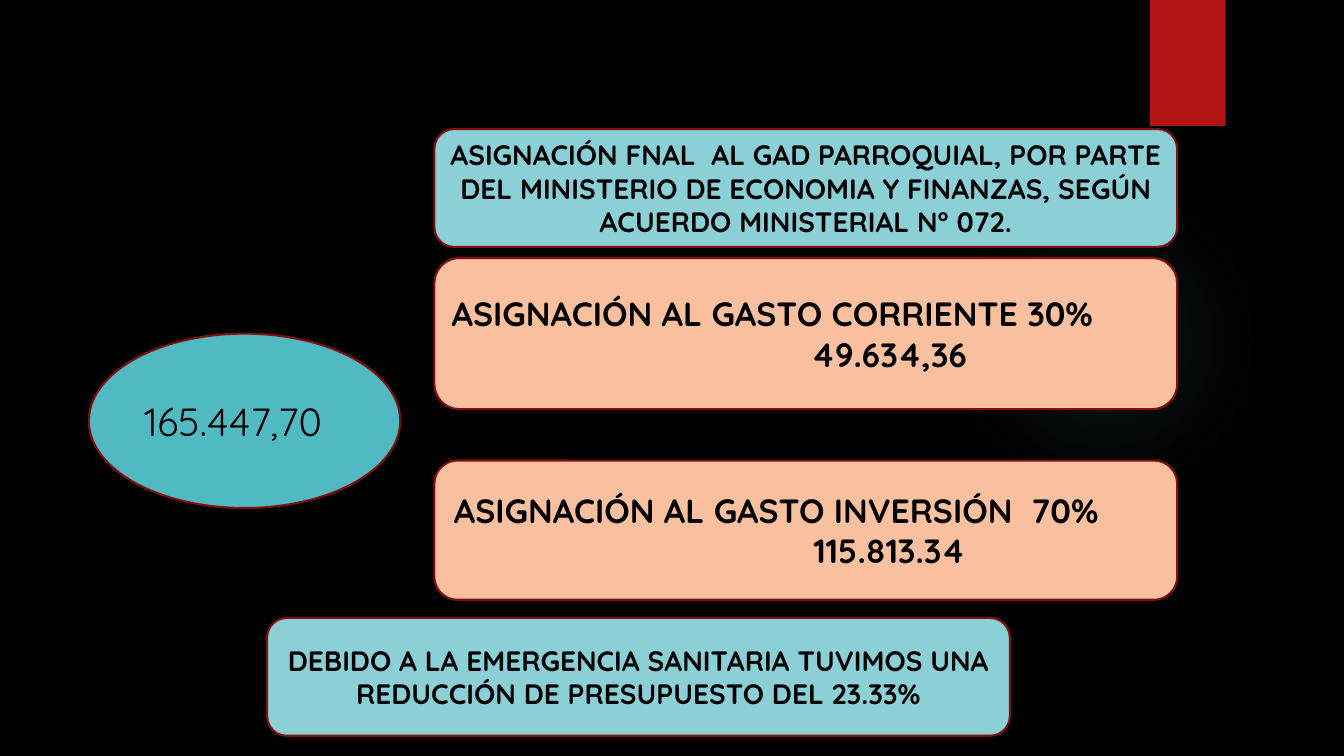
"""Build the slide on the parish budget allocation."""
from dataclasses import dataclass

import lxml.etree
import pptx
import pptx.dml.color
import pptx.enum.shapes
import pptx.enum.text
import pptx.oxml.ns
import pptx.util

Pt = pptx.util.Pt
Kind = pptx.enum.shapes.MSO_SHAPE
Align = pptx.enum.text.PP_ALIGN

FONT = "Quicksand"
BLACK, RED, DARK_RED = "000000", "B01513", "82100E"
AQUA, TEAL, PEACH = "8AD0D6", "50B9C1", "F8C09F"
PANEL_LEFT, PANEL_WIDTH = 310.3, 530.6
AMOUNT_INDENT = 257


@dataclass(frozen=True)
class Line:
    text: str
    indent: float = 0


@dataclass(frozen=True)
class Panel:
    top: float
    height: float
    color: str
    lines: tuple[Line, ...] = ()
    size: float = 20
    align: Align = Align.CENTER
    left: float = PANEL_LEFT
    width: float = PANEL_WIDTH
    kind: Kind = Kind.ROUNDED_RECTANGLE
    bold: bool = True
    outline: str | None = DARK_RED


HEADING = Panel(92.2, 84.2, AQUA, (Line(
    "ASIGNACIÓN FNAL  AL GAD PARROQUIAL, POR PARTE DEL MINISTERIO DE ECONOMIA "
    "Y FINANZAS, SEGÚN ACUERDO MINISTERIAL N° 072."),))
HEADING_PANEL = Panel(HEADING.top, HEADING.height, HEADING.color)
GLOW = Panel(131.8, 221.8, TEAL, left=677.5, width=221.8, kind=Kind.OVAL, outline=None)
TAB = Panel(0, 90, RED, left=821.5, width=54, kind=Kind.RECTANGLE, outline=None)
PANELS = (
    TAB,
    HEADING_PANEL,
    Panel(184.3, 108, PEACH,
          (Line("ASIGNACIÓN AL GASTO CORRIENTE 30%"), Line("49.634,36", AMOUNT_INDENT)),
          24, Align.LEFT),
    Panel(329, 99.4, PEACH,
          (Line("ASIGNACIÓN AL GASTO INVERSIÓN  70%", 2),
           Line("115.813.34", AMOUNT_INDENT + 2)),
          24, Align.LEFT),
    Panel(238.3, 124.6, TEAL, (Line("165.447,70"),), 28, Align.LEFT,
          left=63.4, width=222.5, kind=Kind.OVAL, bold=False),
    Panel(441.4, 84.2, AQUA, (Line(
        "DEBIDO A LA EMERGENCIA SANITARIA TUVIMOS UNA REDUCCIÓN DE PRESUPUESTO "
        "DEL 23.33%"),), left=190.8),
)


def paint(fill: pptx.dml.fill.FillFormat, color: str) -> None:
    """Give a fill one solid colour."""
    fill.solid()
    fill.fore_color.rgb = pptx.dml.color.RGBColor.from_string(color)


def write(frame: pptx.text.text.TextFrame, panel: Panel) -> None:
    """Write the lines of a panel, one paragraph each."""
    frame.word_wrap = True
    frame.auto_size = pptx.enum.text.MSO_AUTO_SIZE.NONE
    frame.vertical_anchor = pptx.enum.text.MSO_ANCHOR.MIDDLE
    for number, line in enumerate(panel.lines):
        paragraph = frame.add_paragraph() if number else frame.paragraphs[0]
        paragraph.text = line.text
        paragraph.alignment = panel.align
        if line.indent:
            paragraph._p.get_or_add_pPr().set("marL", str(Pt(line.indent)))
        paragraph.font.name = FONT
        paragraph.font.size = Pt(panel.size)
        paragraph.font.bold = panel.bold
        paint(paragraph.font.fill, BLACK)


def draw(slide: pptx.slide.Slide, panel: Panel) -> pptx.shapes.autoshape.Shape:
    """Draw a panel with its text."""
    shape = slide.shapes.add_shape(
        panel.kind, Pt(panel.left), Pt(panel.top), Pt(panel.width), Pt(panel.height))
    shape.shadow.inherit = False
    paint(shape.fill, panel.color)
    if panel.outline:
        paint(shape.line.fill, panel.outline)
        shape.line.width = Pt(1.5)
    else:
        shape.line.fill.background()
    write(shape.text_frame, panel)
    return shape


def draw_glow(slide: pptx.slide.Slide) -> None:
    """Draw the faint round glow that fades outwards."""
    properties = draw(slide, GLOW)._element.spPr
    solid = properties.find(pptx.oxml.ns.qn("a:solidFill"))
    stops = "".join(
        f'<a:gs pos="{place * 1000}"><a:srgbClr val="{GLOW.color}">'
        f'<a:alpha val="{alpha * 1000}"/></a:srgbClr></a:gs>'
        for place, alpha in ((0, 7), (36, 6), (69, 0)))
    gradient = lxml.etree.fromstring(
        f'<a:gradFill {pptx.oxml.ns.nsdecls("a")}><a:gsLst>{stops}</a:gsLst>'
        '<a:path path="circle"><a:fillToRect l="50000" t="50000" r="50000" b="50000"/>'
        '</a:path></a:gradFill>')
    properties.replace(solid, gradient)


def place_heading(slide: pptx.slide.Slide) -> None:
    """Set the title over the heading panel."""
    heading = slide.shapes.title
    heading.left, heading.top = Pt(HEADING.left), Pt(HEADING.top)
    heading.width, heading.height = Pt(HEADING.width), Pt(HEADING.height)
    heading.text_frame.margin_left = heading.text_frame.margin_right = Pt(11)
    write(heading.text_frame, HEADING)
    slide.shapes._spTree.append(heading._element)


def main() -> None:
    """Build and save the slide."""
    deck = pptx.Presentation()
    deck.slide_width, deck.slide_height = Pt(960), Pt(540)
    slide = deck.slides.add_slide(deck.slide_layouts.get_by_name("Title Only"))
    paint(slide.background.fill, BLACK)
    draw_glow(slide)
    for panel in PANELS:
        draw(slide, panel)
    place_heading(slide)
    deck.save("out.pptx")


if __name__ == "__main__":
    main()
